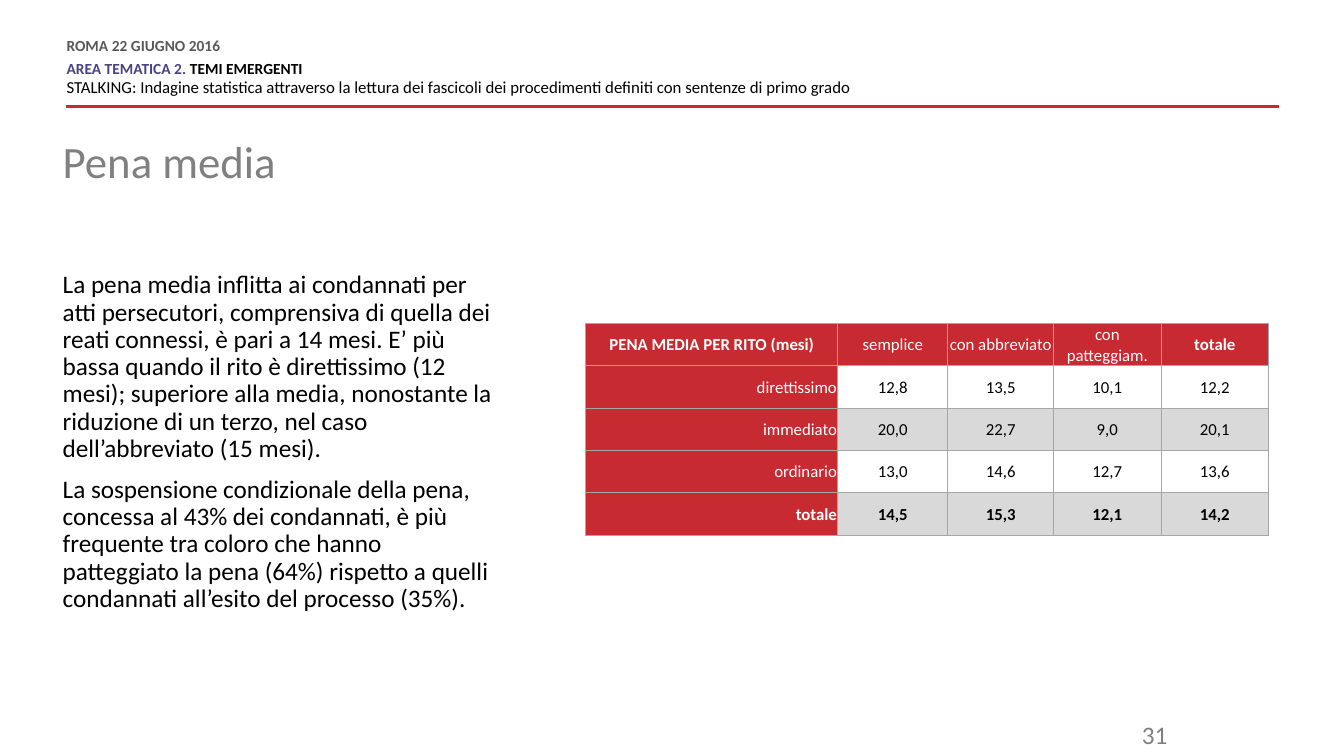
from lxml.etree import SubElement as Sub
from pptx import Presentation
from pptx.dml.color import RGBColor
from pptx.enum.shapes import MSO_CONNECTOR as Link
from pptx.enum.text import MSO_ANCHOR as Anchor, MSO_AUTO_SIZE as Auto, PP_ALIGN as Align
from pptx.oxml.ns import qn
from pptx.util import Pt

RED, GREY, WHITE, BLACK = "C72A31", "D9D9D9", "FFFFFF", "000000"


def tint(code):
    return RGBColor.from_string(code)


def write(para, text, size, color, bold=False):
    run = para.add_run()
    run.text = text
    font = run.font
    font.name, font.size, font.bold = "Calibri", Pt(size), bold
    font.color.rgb = tint(color)


def place(shape, box, inset=0):
    shape.left, shape.top, shape.width, shape.height = map(Pt, box)
    frame = shape.text_frame
    frame.word_wrap = True
    frame.auto_size = Auto.NONE
    frame.vertical_anchor = Anchor.TOP
    frame.margin_left = frame.margin_right = Pt(inset)
    frame.margin_top = frame.margin_bottom = Pt(inset / 2)
    return frame


def space(para, line, before=0, after=0):
    para.line_spacing = line
    para.space_before, para.space_after = Pt(before), Pt(after)


def add_header(slide, box):
    left, top, width, height = box
    frame = place(slide.shapes.add_textbox(0, 0, 0, 0), (left, top, 600, height))
    lines = [
        (0, 6, [("ROMA 22 GIUGNO 2016", 11, "595959", True)]),
        (0, 0, [("AREA TEMATICA 2. ", 11, "484384", True),
                ("TEMI EMERGENTI", 11, BLACK, True)]),
        (3, 6, [("STALKING: Indagine statistica attraverso la lettura dei fascicoli "
                 "dei procedimenti definiti con sentenze di primo grado", 12, BLACK)]),
    ]
    for i, (before, after, runs) in enumerate(lines):
        para = frame.add_paragraph() if i else frame.paragraphs[0]
        space(para, Pt(10.8), before, after)
        for run in runs:
            write(para, *run)
    base = Pt(top + height)
    rule = slide.shapes.add_connector(Link.STRAIGHT, Pt(left), base, Pt(left + width), base)
    rule.line.color.rgb = tint(RED)
    rule.line.width = Pt(2)
    Sub(rule._element.spPr, qn("a:effectLst"))


def add_title(slide, box):
    para = place(slide.shapes.title, box).paragraphs[0]
    para.alignment = Align.LEFT
    space(para, 0.9)
    write(para, "Pena media", 32, "808080")


def add_body(slide, box):
    frame = place(slide.placeholders[1], box)
    texts = [
        "La pena media inflitta ai condannati per atti persecutori, comprensiva di "
        "quella dei reati connessi, è pari a 14 mesi. E’ più bassa quando il rito è "
        "direttissimo (12 mesi); superiore alla media, nonostante la riduzione di un "
        "terzo, nel caso dell’abbreviato (15 mesi).",
        "La sospensione condizionale della pena, concessa al 43% dei condannati, è più "
        "frequente tra coloro che hanno patteggiato la pena (64%) rispetto a quelli "
        "condannati all’esito del processo (35%).",
    ]
    for i, text in enumerate(texts):
        para = frame.add_paragraph() if i else frame.paragraphs[0]
        props = para._p.get_or_add_pPr()
        props.set("marL", "0")
        props.set("indent", "0")
        Sub(props, qn("a:buNone"))
        space(para, 0.9, 10 if i else 0)
        write(para, text, 18, BLACK)


def edge(cell):
    props = cell._tc.get_or_add_tcPr()
    for side in ("lnL", "lnR", "lnT", "lnB"):
        line = Sub(props, qn("a:" + side), w=str(Pt(0.75)))
        Sub(Sub(line, qn("a:solidFill")), qn("a:srgbClr"), val="A6A6A6")


def add_grid(slide, box):
    rows = [
        ("PENA MEDIA PER RITO (mesi)", "semplice", "con abbreviato", "con patteggiam.", "totale"),
        ("direttissimo", "12,8", "13,5", "10,1", "12,2"),
        ("immediato", "20,0", "22,7", "9,0", "20,1"),
        ("ordinario", "13,0", "14,6", "12,7", "13,6"),
        ("totale", "14,5", "15,3", "12,1", "14,2"),
    ]
    last = len(rows) - 1
    table = slide.shapes.add_table(len(rows), len(rows[0]), *map(Pt, box)).table
    for col, width in zip(table.columns, (180, 78.5, 75.6, 76.8, 76.8)):
        col.width = Pt(width)
    for r, row in enumerate(rows):
        table.rows[r].height = Pt(box[3] / len(rows))
        for c, text in enumerate(row):
            cell = table.cell(r, c)
            head = r == 0 or c == 0
            edge(cell)
            cell.fill.solid()
            cell.fill.fore_color.rgb = tint(RED if head else WHITE if r % 2 else GREY)
            cell.vertical_anchor = Anchor.MIDDLE
            cell.margin_left = cell.margin_right = cell.margin_top = Pt(0.7)
            cell.margin_bottom = 0
            para = cell.text_frame.paragraphs[0]
            para.alignment = Align.RIGHT if r and c == 0 else Align.CENTER
            bold = r == last or r == 0 and c in (0, len(row) - 1)
            write(para, text, 12, WHITE if head else BLACK, bold)


def add_number(slide, box):
    para = place(slide.shapes.add_textbox(0, 0, 0, 0), box, 7.2).paragraphs[0]
    para.alignment = Align.RIGHT
    write(para, "31", 18, "7F7F7F")


def main():
    deck = Presentation()
    deck.slide_width, deck.slide_height = Pt(960), Pt(540)
    slide = deck.slides.add_slide(deck.slide_layouts[1])
    add_header(slide, (47.5, 28, 866, 48))
    add_number(slide, (756, 510.5, 85, 25))
    add_body(slide, (44.8, 194.4, 307, 240.5))
    add_title(slide, (44.8, 100, 400, 81.5))
    add_grid(slide, (418.5, 231, 487.7, 151.5))
    deck.save("out.pptx")


if __name__ == "__main__":
    main()
